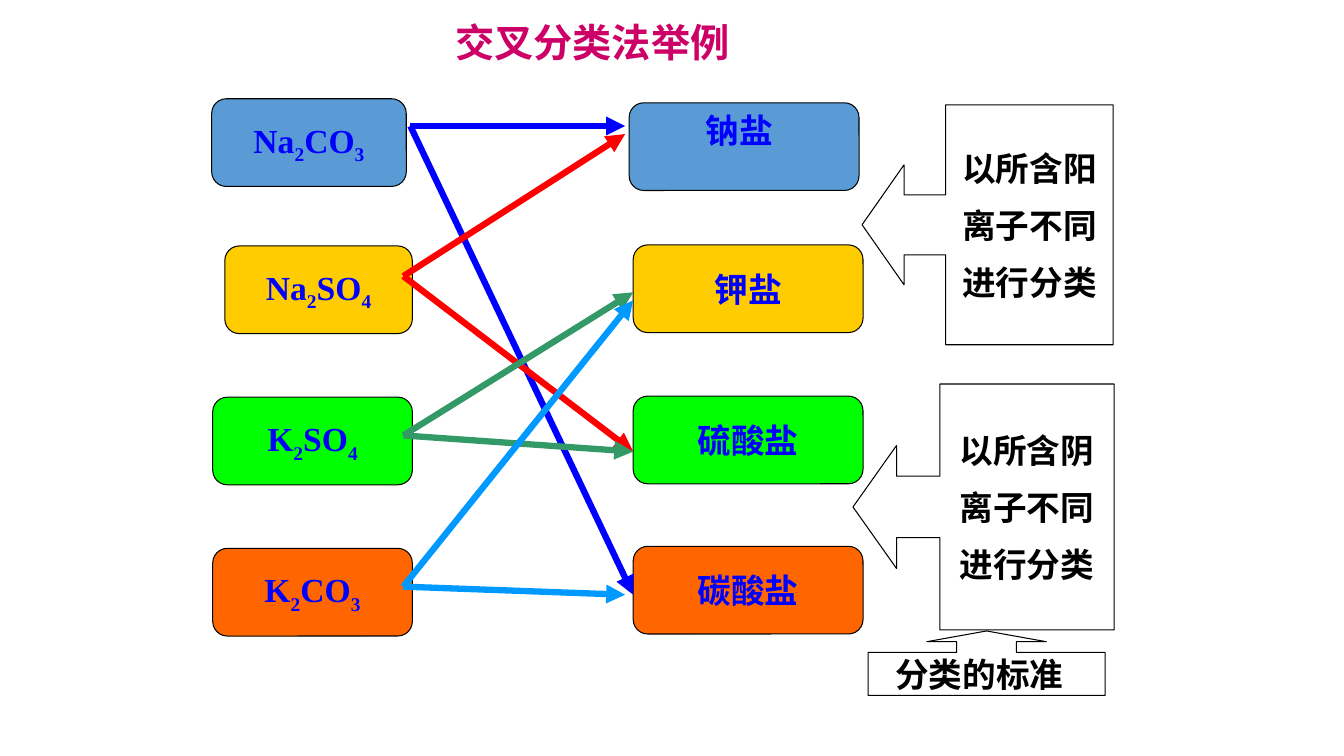
import pptx
import pptx.util
import pptx.dml.color
import pptx.enum.shapes
import pptx.enum.text
import pptx.oxml.ns
import lxml.etree

RGB = pptx.dml.color.RGBColor
SHAPE = pptx.enum.shapes.MSO_SHAPE
ALIGN = pptx.enum.text.PP_ALIGN
ANCHOR = pptx.enum.text.MSO_ANCHOR
Inches, Pt = pptx.util.Inches, pptx.util.Pt

BLACK = RGB(0, 0, 0)
BLUE = RGB(0x00, 0x00, 0xFF)
MAGENTA = RGB(0xCC, 0x00, 0x66)
STEEL = RGB(0x5B, 0x9B, 0xD5)
GOLD = RGB(0xFF, 0xCC, 0x00)
LIME = RGB(0x00, 0xFF, 0x00)
ORANGE = RGB(0xFF, 0x66, 0x00)
RED = RGB(0xFF, 0x00, 0x00)
GREEN = RGB(0x33, 0x99, 0x66)
SKY = RGB(0x00, 0x99, 0xFF)
SERIF, SANS = "Times New Roman", "Arial"

# Content: digits in formulas become subscripts
TITLE = "交叉分类法举例"
BOX_HEIGHT, CLASS_WIDTH = 0.87, 2.28
# formula, left, top, width, fill
COMPOUNDS = [
    ("Na2CO3", 2.10, 0.98, 1.93, STEEL),
    ("Na2SO4", 2.23, 2.44, 1.86, GOLD),
    ("K2SO4", 2.11, 3.94, 1.98, LIME),
    ("K2CO3", 2.11, 5.44, 1.98, ORANGE),
]
# salt class, left, top, fill
SODIUM_LABEL = "钠盐"
CLASSES = [
    ("", 6.24, 1.02, STEEL),
    ("钾盐", 6.28, 2.43, GOLD),
    ("硫酸盐", 6.28, 3.93, LIME),
    ("碳酸盐", 6.28, 5.42, ORANGE),
]
# start, the two arrow ends, colour
LINKS = [
    ((4.07, 1.25), [(6.20, 1.25), (6.28, 5.90)], BLUE),
    ((4.00, 2.74), [(6.20, 1.33), (6.28, 4.48)], RED),
    ((4.00, 4.32), [(6.28, 2.90), (6.28, 4.48)], GREEN),
    ((4.00, 5.82), [(6.20, 5.90), (6.28, 2.98)], SKY),
]
# lines, place, preset, adjustments, font
CRITERIA = [
    (["以所含阳", "离子不同", "进行分类"], (8.55, 1.04, 2.49, 2.38),
     SHAPE.LEFT_ARROW_CALLOUT, (0.25, 0.25, 0.175, 0.667), SERIF),
    (["以所含阴", "离子不同", "进行分类"], (8.46, 3.81, 2.59, 2.44),
     SHAPE.LEFT_ARROW_CALLOUT, (0.25, 0.25, 0.177, 0.667), SANS),
    (["分类的标准"], (8.61, 6.26, 2.35, 0.64),
     SHAPE.UP_ARROW_CALLOUT, (0.926, 0.926, 0.167, 0.667), SERIF),
]

deck = pptx.Presentation()
deck.slide_width, deck.slide_height = Inches(13.33), Inches(7.5)
slide = deck.slides.add_slide(deck.slide_layouts[6])


def write(frame, lines, color, font=SERIF, size=24, align=ALIGN.CENTER,
          spaced=False, wrap=False):
    frame.word_wrap = wrap
    frame.text = "\n".join(lines)
    for paragraph in frame.paragraphs:
        paragraph.alignment = align
        if spaced:
            before = lxml.etree.SubElement(
                paragraph._p.get_or_add_pPr(), pptx.oxml.ns.qn("a:spcBef"))
            lxml.etree.SubElement(
                before, pptx.oxml.ns.qn("a:spcPct")).set("val", "50000")
        for run in paragraph.runs:
            style(run, color, font, size)


def style(run, color, font, size):
    run.font.name, run.font.size, run.font.bold = font, Pt(size), True
    run.font.color.rgb = color


def write_formula(frame, formula):
    frame.word_wrap = False
    paragraph = frame.paragraphs[0]
    paragraph.alignment = ALIGN.CENTER
    for digit in "234":
        formula = formula.replace(digit, f" {digit} ")
    for part in formula.split():
        run = paragraph.add_run()
        run.text = part
        style(run, BLUE, SERIF, 24)
        if part.isdigit():
            run._r.get_or_add_rPr().set("baseline", "-25000")


def add_outlined(preset, place, fill=None):
    shape = slide.shapes.add_shape(preset, *map(Inches, place))
    shape.shadow.inherit = False
    if fill is None:
        shape.fill.background()
    else:
        shape.fill.solid()
        shape.fill.fore_color.rgb = fill
    shape.line.color.rgb = BLACK
    shape.line.width = Pt(0.75)
    shape.text_frame.vertical_anchor = ANCHOR.MIDDLE
    return shape


def add_arrow(start, end, color):
    arrow = slide.shapes.add_connector(
        pptx.enum.shapes.MSO_CONNECTOR.STRAIGHT, *map(Inches, start + end))
    arrow.line.color.rgb = color
    arrow.line.width = Pt(4.5)
    lxml.etree.SubElement(arrow.line._get_or_add_ln(),
                          pptx.oxml.ns.qn("a:tailEnd")).set("type", "triangle")
    lxml.etree.SubElement(arrow._element.spPr, pptx.oxml.ns.qn("a:effectLst"))


# Compounds on the left, salt classes on the right
for formula, left, top, width, fill in COMPOUNDS:
    compound = add_outlined(SHAPE.ROUNDED_RECTANGLE,
                            (left, top, width, BOX_HEIGHT), fill)
    write_formula(compound.text_frame, formula)
for name, left, top, fill in CLASSES:
    salt = add_outlined(SHAPE.ROUNDED_RECTANGLE,
                        (left, top, CLASS_WIDTH, BOX_HEIGHT), fill)
    if name:
        write(salt.text_frame, [name], BLUE)

# Crossing arrows
for start, ends, color in LINKS:
    for end in ends:
        add_arrow(start, end, color)

# Sodium label sits high in its box
sodium = slide.shapes.add_textbox(*map(Inches, (6.9, 1.04, 0.87, 0.5)))
write(sodium.text_frame, [SODIUM_LABEL], BLUE)

# Classification criteria
for lines, place, preset, adjustments, font in CRITERIA:
    callout = add_outlined(preset, place)
    for index, value in enumerate(adjustments):
        callout.adjustments[index] = value
    single = len(lines) == 1
    write(callout.text_frame, lines, BLACK, font, spaced=True, wrap=single,
          align=ALIGN.LEFT if single else ALIGN.CENTER)
    if single:
        callout.text_frame.margin_left = Inches(0.27)

# Title
title = slide.shapes.add_textbox(*map(Inches, (3.04, 0.13, 5.67, 0.57)))
write(title.text_frame, [TITLE], MAGENTA, SANS, 28, spaced=True, wrap=True)

deck.save("out.pptx")
